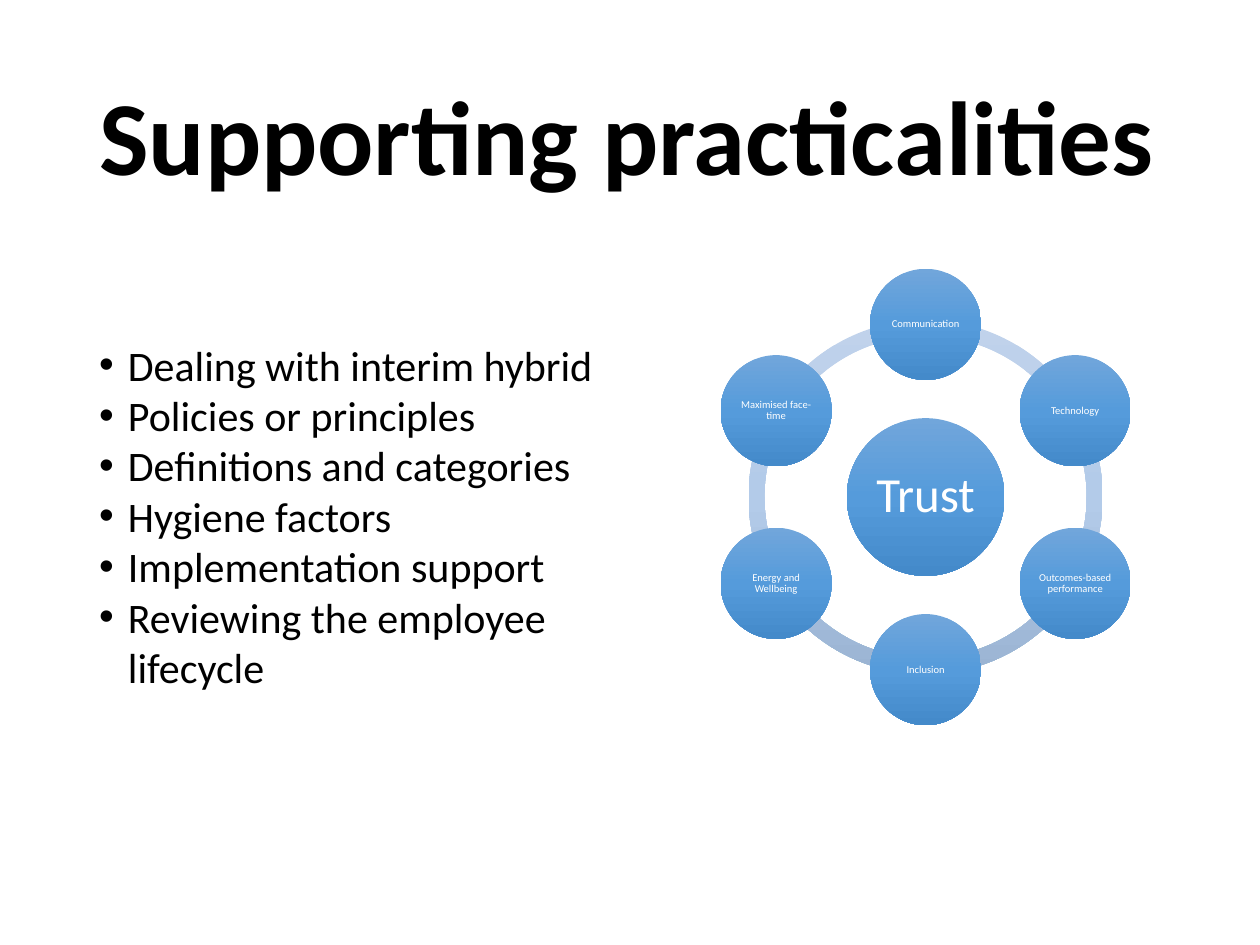
from collections import namedtuple
from copy import deepcopy
from dataclasses import dataclass
from math import cos, radians, sin

from lxml.etree import SubElement
from pptx import Presentation
from pptx.dml.color import RGBColor
from pptx.enum.shapes import MSO_SHAPE as Shape
from pptx.enum.text import MSO_ANCHOR as Anchor, MSO_AUTO_SIZE as AutoSize, PP_ALIGN as Align
from pptx.oxml.ns import qn
from pptx.util import Cm, Pt

Box = namedtuple("Box", "left top width height")


@dataclass(frozen=True)
class Theme:
    font: str = "Calibri"
    ink: str = "000000"
    light: str = "FFFFFF"
    ring: tuple = ("C0D2EB", "B3CBE9", "9BB4D3")
    disc: tuple = ("71A6DB", "559BDB", "448ACA")
    title_size: int = 60
    body_size: int = 24
    hub_size: int = 28
    factor_size: int = 6


THEME = Theme()
TITLE = "Supporting practicalities"
TOPICS = [
    "Dealing with interim hybrid",
    "Policies or principles",
    "Definitions and categories",
    "Hygiene factors",
    "Implementation support",
    "Reviewing the employee lifecycle",
]
HUB = "Trust"
FACTORS = [
    "Communication",
    "Technology",
    "Outcomes-based performance",
    "Inclusion",
    "Energy and Wellbeing",
    "Maximised face-time",
]


def set_all(target, **values):
    for name, value in values.items():
        setattr(target, name, value)


def lengths(box):
    return [Cm(value) for value in box]


def write(para, text, size, color, bold=False):
    span = para.add_run()
    span.text = text
    set_all(span.font, name=THEME.font, size=Pt(size), bold=bold)
    span.font.color.rgb = RGBColor.from_string(color)


def add_bullet(para):
    props = para._p.get_or_add_pPr()
    set_indent = {"marL": Cm(0.58), "indent": Cm(-0.58)}
    for name, value in set_indent.items():
        props.set(name, str(value))
    SubElement(props, qn("a:buFont"), typeface="Arial")
    SubElement(props, qn("a:buChar"), char="•")


def add_shaded(page, kind, box, colors):
    shape = page.shapes.add_shape(kind, *lengths(box))
    shape.shadow.inherit = False
    shape.line.fill.background()
    fill = shape.fill
    fill.gradient()
    fill.gradient_angle = 270
    stop_list = shape._element.spPr.find(qn("a:gradFill")).find(qn("a:gsLst"))
    stop_list.append(deepcopy(stop_list[0]))
    for stop, position, color in zip(fill.gradient_stops, (0, 0.5, 1), colors):
        stop.position = position
        stop.color.rgb = RGBColor.from_string(color)
    return shape


def add_disc(page, center, diameter, text, size, inset):
    x, y = center
    box = Box(x - diameter / 2, y - diameter / 2, diameter, diameter)
    frame = add_shaded(page, Shape.OVAL, box, THEME.disc).text_frame
    margins = {f"margin_{side}": Cm(inset) for side in ("left", "top", "right", "bottom")}
    set_all(frame, word_wrap=True, vertical_anchor=Anchor.MIDDLE, **margins)
    para = frame.paragraphs[0]
    set_all(para, alignment=Align.CENTER, line_spacing=0.9)
    write(para, text, size, THEME.light)


def add_title(page, box):
    frame = page.shapes.add_textbox(*lengths(box)).text_frame
    set_all(frame, word_wrap=True, vertical_anchor=Anchor.MIDDLE)
    para = frame.paragraphs[0]
    para.line_spacing = 0.9
    write(para, TITLE, THEME.title_size, THEME.ink, bold=True)


def add_topics(page, box):
    frame = page.shapes.add_textbox(*lengths(box)).text_frame
    set_all(frame, word_wrap=True, auto_size=AutoSize.SHAPE_TO_FIT_TEXT)
    for index, topic in enumerate(TOPICS):
        para = frame.add_paragraph() if index else frame.paragraphs[0]
        add_bullet(para)
        write(para, topic, THEME.body_size, THEME.ink)


def add_cycle(page, box):
    x, y = box.left + box.width / 2, box.top + box.height / 2
    factor_width, hub_width, ring_width = 2.24, 3.18, 7.14
    orbit = (box.height - factor_width) / 2
    step = 360 / len(FACTORS)
    angles = [(270 + step * index) % 360 for index in range(len(FACTORS))]
    ring_box = Box(x - ring_width / 2, y - ring_width / 2, ring_width, ring_width)

    for start in reversed(angles):
        arc = add_shaded(page, Shape.BLOCK_ARC, ring_box, THEME.ring)
        adjustments = (start * 0.6, (start + step) % 360 * 0.6, 0.045)
        for index, value in enumerate(adjustments):
            arc.adjustments[index] = value

    add_disc(page, (x, y), hub_width, HUB, THEME.hub_size, 0.1)
    for angle, factor in zip(angles, FACTORS):
        turn = radians(angle)
        center = (x + orbit * cos(turn), y + orbit * sin(turn))
        add_disc(page, center, factor_width, factor, THEME.factor_size, 0.02)


def main():
    deck = Presentation()
    set_all(deck, slide_width=Cm(25.4), slide_height=Cm(19.05))
    page = deck.slides.add_slide(deck.slide_layouts[6])
    add_title(page, Box(1.75, 1.02, 21.9, 3.68))
    add_cycle(page, Box(14.52, 5.42, 8.28, 9.2))
    add_topics(page, Box(1.75, 6.71, 12.32, 7.44))
    deck.save("out.pptx")


if __name__ == "__main__":
    main()
